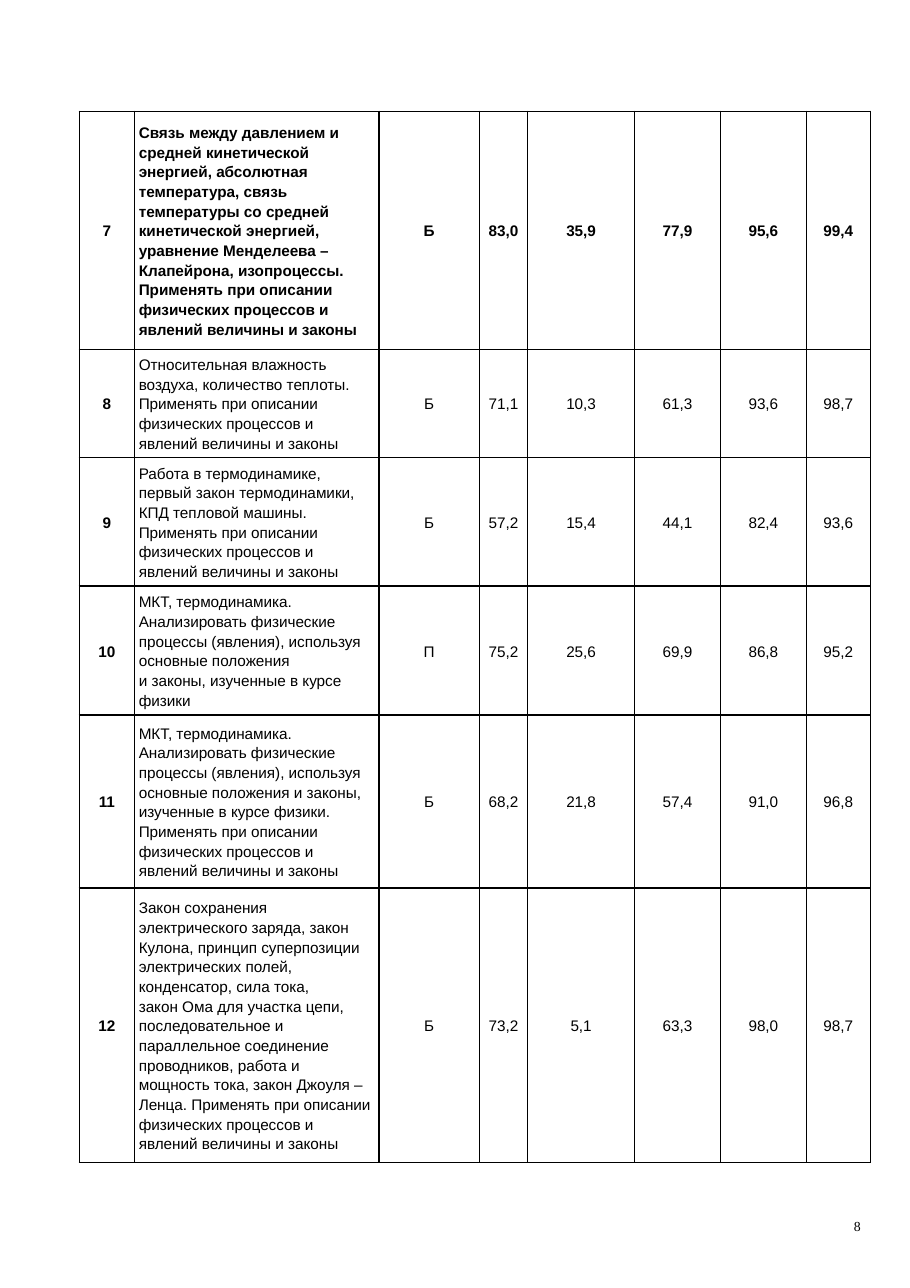
from lxml.etree import SubElement
from pptx import Presentation
from pptx.dml.color import RGBColor
from pptx.enum.text import MSO_ANCHOR, PP_ALIGN
from pptx.oxml.ns import qn
from pptx.util import Inches, Pt

COLORS = {"ink": "000000", "paper": "FFFFFF"}
COL_WIDTHS = [0.5, 2.22, 0.91, 0.44, 0.97, 0.78, 0.78, 0.58]
ROW_HEIGHTS = [2.16, 0.98, 1.17, 1.17, 1.57, 2.36]
TOPIC_COL = 1
BOLD_TASK = "7"

TASKS = [
    ["7",
     "Связь между давлением и средней кинетической энергией, абсолютная\n"
     "температура, связь температуры со средней кинетической энергией,\n"
     "уравнение Менделеева – Клапейрона, изопроцессы. Применять при описании "
     "физических процессов и явлений величины и законы",
     "Б", "83,0", "35,9", "77,9", "95,6", "99,4"],
    ["8",
     "Относительная влажность воздуха, количество теплоты. Применять при "
     "описании физических процессов и явлений величины и законы",
     "Б", "71,1", "10,3", "61,3", "93,6", "98,7"],
    ["9",
     "Работа в термодинамике, первый закон термодинамики, КПД тепловой машины. "
     "Применять при описании физических процессов и явлений величины и законы",
     "Б", "57,2", "15,4", "44,1", "82,4", "93,6"],
    ["10",
     "МКТ, термодинамика. Анализировать физические процессы (явления), "
     "используя основные положения\nи законы, изученные в курсе физики",
     "П", "75,2", "25,6", "69,9", "86,8", "95,2"],
    ["11",
     "МКТ, термодинамика. Анализировать физические процессы (явления), "
     "используя основные положения и законы, изученные в курсе физики. "
     "Применять при описании\nфизических процессов и явлений величины и законы",
     "Б", "68,2", "21,8", "57,4", "91,0", "96,8"],
    ["12",
     "Закон сохранения электрического заряда, закон Кулона, принцип суперпозиции "
     "электрических полей, конденсатор, сила тока,\n"
     "закон Ома для участка цепи, последовательное и параллельное соединение\n"
     "проводников, работа и мощность тока, закон Джоуля – Ленца. Применять при "
     "описании физических процессов и явлений величины и законы",
     "Б", "73,2", "5,1", "63,3", "98,0", "98,7"],
]


def add_text(p, text, font, size, bold=False):
    """Add one run per line of text, with line breaks between them."""
    for i, line in enumerate(text.split("\n")):
        if i:
            p.add_line_break()
        r = p.add_run()
        r.text = line
        r.font.name = font
        r.font.size = Pt(size)
        r.font.bold = bold
        r.font.color.rgb = RGBColor.from_string(COLORS["ink"])


def add_borders(cell):
    tc_pr = cell._tc.get_or_add_tcPr()
    for side in ("a:lnL", "a:lnR", "a:lnT", "a:lnB"):
        ln = SubElement(tc_pr, qn(side), w=str(Pt(1)))
        fill = SubElement(ln, qn("a:solidFill"))
        SubElement(fill, qn("a:srgbClr"), val=COLORS["ink"])


prs = Presentation()
prs.slide_width = Inches(8.26)
prs.slide_height = Inches(11.69)
s = prs.slides.add_slide(prs.slide_layouts[6])
s.background.fill.solid()
s.background.fill.fore_color.rgb = RGBColor.from_string(COLORS["paper"])

# Page number
sp = s.shapes.add_textbox(Inches(7.72), Inches(11.05), Inches(0.18), Inches(0.16))
tf = sp.text_frame
tf.word_wrap = True
tf.margin_left = tf.margin_right = tf.margin_top = tf.margin_bottom = 0
p = tf.paragraphs[0]
p._p.get_or_add_pPr().set("marL", str(Inches(0.03)))
add_text(p, "8", "Times New Roman", 9)

# Task results
table = s.shapes.add_table(
    len(TASKS), len(COL_WIDTHS), Inches(0.72), Inches(1.01),
    Inches(sum(COL_WIDTHS)), Inches(sum(ROW_HEIGHTS))).table
table.first_row = False
table.horz_banding = False
for column, width in zip(table.columns, COL_WIDTHS):
    column.width = Inches(width)

for row, height, task in zip(table.rows, ROW_HEIGHTS, TASKS):
    row.height = Inches(height)
    for col, (cell, text) in enumerate(zip(row.cells, task)):
        add_borders(cell)
        cell.fill.background()
        cell.vertical_anchor = MSO_ANCHOR.MIDDLE
        cell.margin_left = cell.margin_right = Inches(0.04)
        cell.margin_top = cell.margin_bottom = 0
        p = cell.text_frame.paragraphs[0]
        p.alignment = PP_ALIGN.LEFT if col == TOPIC_COL else PP_ALIGN.CENTER
        p.line_spacing = 1.15
        p.space_after = Pt(10)
        add_text(p, text, "Arial", 10, bold=col == 0 or task[0] == BOLD_TASK)

prs.save("out.pptx")
